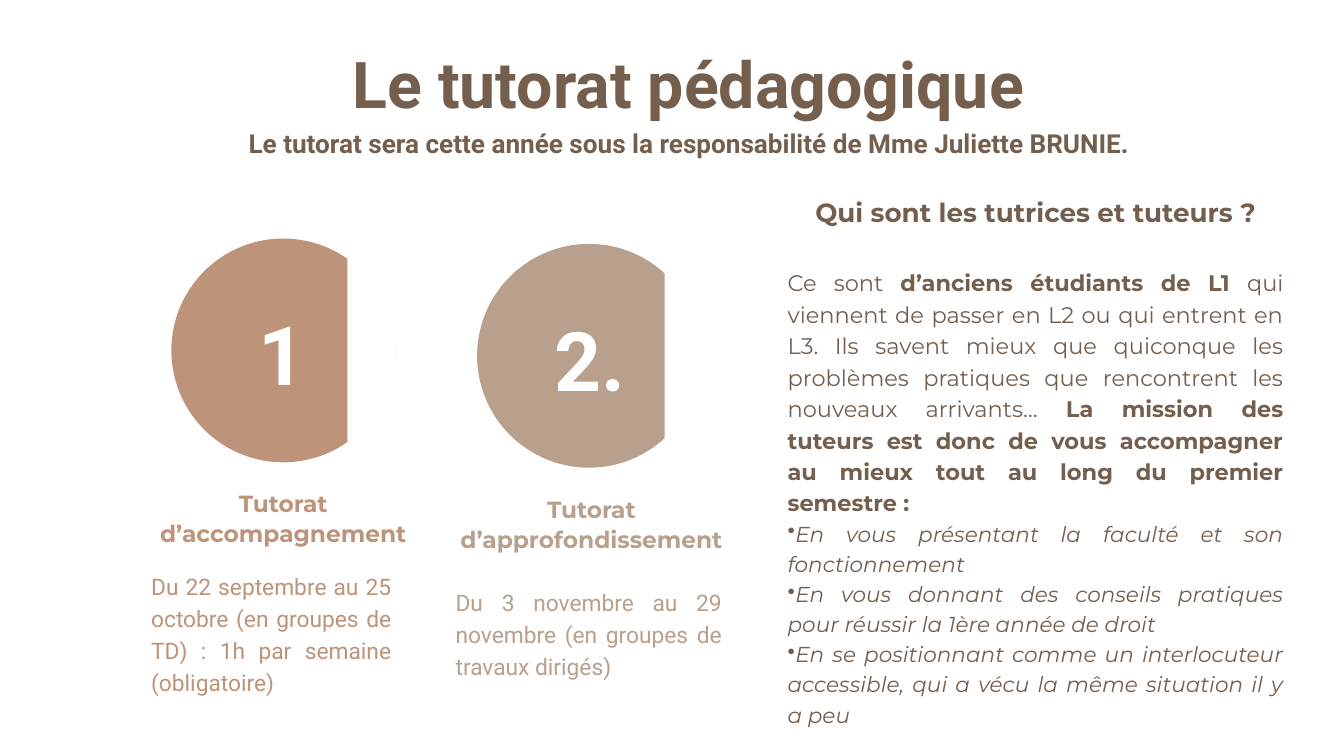
from dataclasses import dataclass
from typing import NamedTuple

from lxml.etree import SubElement
from pptx import Presentation
from pptx.dml.color import RGBColor
from pptx.enum.shapes import MSO_SHAPE as Preset
from pptx.enum.text import MSO_ANCHOR as Anchor, MSO_AUTO_SIZE as AutoSize, PP_ALIGN as Align
from pptx.oxml.ns import qn
from pptx.util import Pt

EMU_PER_PX = 9144  # 100 px to the inch


def px(length: int) -> int:
    return length * EMU_PER_PX


@dataclass(frozen=True)
class Theme:
    brown: str = "745E4D"
    copper: str = "BD9479"
    sand: str = "B8A08C"
    white: str = "FFFFFF"
    heading_font: str = "Montserrat"
    plain_font: str = "Roboto"
    title: float = 69
    subtitle: float = 28
    number: float = 87.9
    stage_name: float = 25
    stage_dates: float = 24.4
    question: float = 28.1
    answer: float = 24.1
    mission: float = 23.1


THEME = Theme()


class Frame(NamedTuple):
    left: int
    top: int
    width: int
    height: int


class Span(NamedTuple):
    text: str
    bold: bool = False
    italic: bool = False


class Para(NamedTuple):
    spans: list[Span]
    font: str
    size: float
    color: str
    leading: float
    align: Align = Align.LEFT
    gap_after: float = 0
    bullet: bool = False


@dataclass(frozen=True)
class Stage:
    number: str
    name: str
    dates: str
    color: str
    disc: Frame
    cut: Frame
    number_frame: Frame
    name_frame: Frame
    dates_frame: Frame
    dates_leading: float


STAGES = [
    Stage("1.", "Tutorat d’accompagnement",
          "Du 22 septembre au 25 octobre (en groupes de TD) : 1h par semaine (obligatoire)",
          THEME.copper, Frame(255, 355, 333, 333), Frame(517, 315, 71, 413),
          Frame(384, 428, 76, 166), Frame(225, 726, 393, 86), Frame(225, 846, 357, 187), 34.1),
    Stage("2.", "Tutorat d’approfondissement",
          "Du 3 novembre au 29 novembre (en groupes de travaux dirigés)",
          THEME.sand, Frame(710, 363, 333, 333), Frame(989, 323, 71, 413),
          Frame(825, 436, 110, 166), Frame(684, 735, 392, 86), Frame(678, 869, 396, 140), 34.2),
]

MISSIONS = [
    "En vous présentant la faculté et son fonctionnement",
    "En vous donnant des conseils pratiques pour réussir la 1ère année de droit",
    "En se positionnant comme un interlocuteur accessible, qui a vécu la même situation il y a peu",
]

TEXT_FORMAT = {
    "margin_left": 0, "margin_top": 0, "margin_right": 0, "margin_bottom": 0,
    "word_wrap": True, "auto_size": AutoSize.SHAPE_TO_FIT_TEXT, "vertical_anchor": Anchor.TOP,
}


def apply(target, values: dict) -> None:
    for key, value in values.items():
        setattr(target, key, value)


def place(shape, frame: Frame) -> None:
    apply(shape, {side: px(length) for side, length in frame._asdict().items()})


def write(shape, paras: list[Para]) -> None:
    text_frame = shape.text_frame
    apply(text_frame, TEXT_FORMAT)
    for index, para in enumerate(paras):
        line = text_frame.add_paragraph() if index else text_frame.paragraphs[0]
        apply(line, {"alignment": para.align, "line_spacing": Pt(para.leading),
                     "space_before": Pt(0), "space_after": Pt(para.gap_after)})
        if para.bullet:
            props = line._p.get_or_add_pPr()
            apply_indent = {"marL": "0", "indent": "0"}
            for key, value in apply_indent.items():
                props.set(key, value)
            SubElement(props, qn("a:buChar")).set("char", "•")
        for span in para.spans:
            run = line.add_run()
            run.text = span.text
            apply(run.font, {"name": para.font, "size": Pt(para.size),
                             "bold": span.bold, "italic": span.italic})
            run.font.color.rgb = RGBColor.from_string(para.color)


def add_text(slide, frame: Frame, paras: list[Para]) -> None:
    write(slide.shapes.add_textbox(*map(px, frame)), paras)


def add_flat(slide, preset: Preset, frame: Frame, color: str) -> None:
    shape = slide.shapes.add_shape(preset, *map(px, frame))
    shape.shadow.inherit = False
    shape.fill.solid()
    shape.fill.fore_color.rgb = RGBColor.from_string(color)
    shape.line.fill.background()


def add_stage(slide, stage: Stage) -> None:
    add_flat(slide, Preset.OVAL, stage.disc, stage.color)
    add_flat(slide, Preset.RECTANGLE, stage.cut, THEME.white)
    add_text(slide, stage.number_frame, [
        Para([Span(stage.number, bold=True)], THEME.plain_font, THEME.number, THEME.white, 123)])
    add_text(slide, stage.name_frame, [
        Para([Span(stage.name, bold=True)], THEME.heading_font, THEME.stage_name,
             stage.color, 31.7, Align.CENTER)])
    add_text(slide, stage.dates_frame, [
        Para([Span(stage.dates)], THEME.plain_font, THEME.stage_dates,
             stage.color, stage.dates_leading, Align.JUSTIFY)])


def main() -> None:
    deck = Presentation()
    apply(deck, {"slide_width": px(2000), "slide_height": px(1125)})
    slide = deck.slides.add_slide(deck.slide_layouts[5])

    # Title and subtitle
    title = slide.shapes.title
    place(title, Frame(339, 47, 1371, 189))
    write(title, [
        Para([Span("Le tutorat pédagogique", bold=True)],
             THEME.plain_font, THEME.title, THEME.brown, 96.6, Align.CENTER),
        Para([Span("Le tutorat sera cette année sous la responsabilité de Mme Juliette BRUNIE.",
                   bold=True)],
             THEME.plain_font, THEME.subtitle, THEME.brown, 39.2, Align.CENTER),
    ])

    # The two stages of tutoring
    for stage in STAGES:
        add_stage(slide, stage)

    # Who the tutors are and what they do
    question = Para([Span("Qui sont les tutrices et tuteurs ?", bold=True)], THEME.heading_font,
                    THEME.question, THEME.brown, 39.3, Align.CENTER, gap_after=39.3)
    answer = Para([
        Span("Ce sont "),
        Span("d’anciens étudiants de L1", bold=True),
        Span(" qui viennent de passer en L2 ou qui entrent en L3. Ils savent mieux que quiconque "
             "les problèmes pratiques que rencontrent les nouveaux arrivants… "),
        Span("La mission des tuteurs est donc de vous accompagner au mieux tout au long "
             "du premier semestre :", bold=True),
    ], THEME.heading_font, THEME.answer, THEME.brown, 33.7, Align.JUSTIFY)
    missions = [Para([Span(mission, italic=True)], THEME.heading_font, THEME.mission,
                     THEME.brown, 32.3, Align.JUSTIFY, bullet=True) for mission in MISSIONS]
    add_text(slide, Frame(1172, 285, 738, 840), [question, answer, *missions])

    deck.save("out.pptx")


if __name__ == "__main__":
    main()
